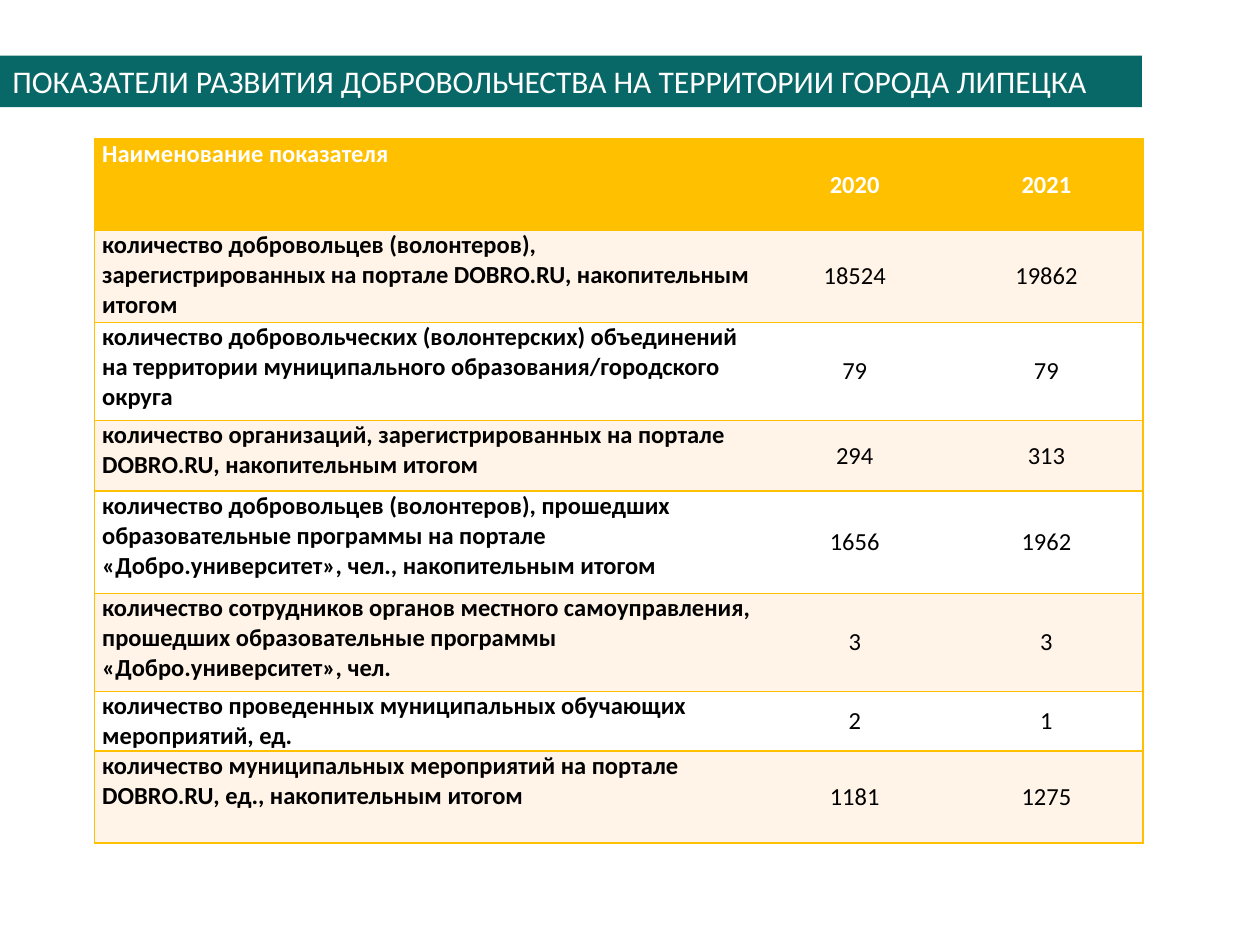
from lxml import etree
from pptx import Presentation
from pptx.dml.color import RGBColor
from pptx.enum.shapes import MSO_SHAPE
from pptx.enum.text import MSO_ANCHOR, PP_ALIGN
from pptx.oxml.ns import qn
from pptx.util import Cm, Pt

RECTANGLE = MSO_SHAPE.RECTANGLE
TOP, MIDDLE = MSO_ANCHOR.TOP, MSO_ANCHOR.MIDDLE
LEFT, CENTER = PP_ALIGN.LEFT, PP_ALIGN.CENTER

TEAL = RGBColor(0x08, 0x68, 0x67)
AMBER = RGBColor(0xFF, 0xC0, 0x00)
CREAM = RGBColor(0xFF, 0xF4, 0xE7)
WHITE = RGBColor(0xFF, 0xFF, 0xFF)
BLACK = RGBColor(0x00, 0x00, 0x00)

TITLE = "ПОКАЗАТЕЛИ РАЗВИТИЯ ДОБРОВОЛЬЧЕСТВА НА ТЕРРИТОРИИ ГОРОДА ЛИПЕЦКА"
INDICATORS = [
    ("Наименование показателя", "2020", "2021"),
    ("количество добровольцев (волонтеров), зарегистрированных на портале "
     "DOBRO.RU, накопительным итогом", "18524", "19862"),
    ("количество добровольческих (волонтерских) объединений на территории "
     "муниципального образования/городского округа", "79", "79"),
    ("количество организаций, зарегистрированных на портале DOBRO.RU, "
     "накопительным итогом", "294", "313"),
    ("количество добровольцев (волонтеров), прошедших образовательные "
     "программы на портале «Добро.университет», чел., накопительным итогом",
     "1656", "1962"),
    ("количество сотрудников органов местного самоуправления, прошедших "
     "образовательные программы «Добро.университет», чел.", "3", "3"),
    ("количество проведенных муниципальных обучающих мероприятий, ед.",
     "2", "1"),
    ("количество муниципальных мероприятий на портале DOBRO.RU, ед., "
     "накопительным итогом", "1181", "1275"),
]
COLUMN_WIDTHS = [13.41, 3.84, 3.89]
ROW_HEIGHTS = [1.85, 1.85, 1.98, 1.42, 2.06, 1.98, 1.19, 1.85]


def write_text(frame, text, size, color, bold=False, align=LEFT, anchor=MIDDLE):
    frame.word_wrap = True
    frame.vertical_anchor = anchor
    para = frame.paragraphs[0]
    para.alignment = align
    span = para.add_run()
    span.text = text
    span.font.name = "Calibri"
    span.font.size = Pt(size)
    span.font.bold = bold
    span.font.color.rgb = color


def set_borders(cell, visible_sides):
    """Draw amber lines on the given sides and clear the other ones."""
    properties = cell._tc.get_or_add_tcPr()
    for index, side in enumerate("LRTB"):
        line = etree.Element(qn(f"a:ln{side}"), w=str(Pt(1)))
        if side in visible_sides:
            fill = etree.SubElement(line, qn("a:solidFill"))
            etree.SubElement(fill, qn("a:srgbClr"), val=str(AMBER))
        else:
            etree.SubElement(line, qn("a:noFill"))
        properties.insert(index, line)


def add_title_band(page, left, top, width, height):
    band = page.shapes.add_shape(RECTANGLE, left, top, width, height)
    band.shadow.inherit = False
    band.fill.solid()
    band.fill.fore_color.rgb = TEAL
    band.line.fill.background()
    write_text(band.text_frame, TITLE, 18, WHITE)


def fill_cell(cell, text, row, column):
    is_header, is_name = row == 0, column == 0
    cell.margin_left = cell.margin_right = Cm(0.16)
    cell.margin_top = cell.margin_bottom = 0
    cell.fill.solid()
    cell.fill.fore_color.rgb = AMBER if is_header else CREAM if row % 2 else WHITE
    write_text(cell.text_frame, text, 14, WHITE if is_header else BLACK,
               bold=is_header or is_name, align=LEFT if is_name else CENTER)
    cell.vertical_anchor = TOP if is_name else MIDDLE
    set_borders(cell, "TB" + {0: "L", len(COLUMN_WIDTHS) - 1: "R"}.get(column, ""))


def add_indicator_table(page, left, top):
    table = page.shapes.add_table(
        len(INDICATORS), len(COLUMN_WIDTHS), left, top,
        Cm(sum(COLUMN_WIDTHS)), Cm(sum(ROW_HEIGHTS))).table
    for column, width in zip(table.columns, COLUMN_WIDTHS):
        column.width = Cm(width)
    for row, height in zip(table.rows, ROW_HEIGHTS):
        row.height = Cm(height)
    for row, texts in enumerate(INDICATORS):
        for column, text in enumerate(texts):
            fill_cell(table.cell(row, column), text, row, column)


def main():
    deck = Presentation()
    deck.slide_width, deck.slide_height = Cm(25.4), Cm(19.05)
    page = deck.slides.add_slide(deck.slide_layouts[6])
    add_indicator_table(page, Cm(1.9), Cm(2.8))
    add_title_band(page, 0, Cm(1.12), Cm(23.02), Cm(1.04))
    deck.save("out.pptx")


if __name__ == "__main__":
    main()
